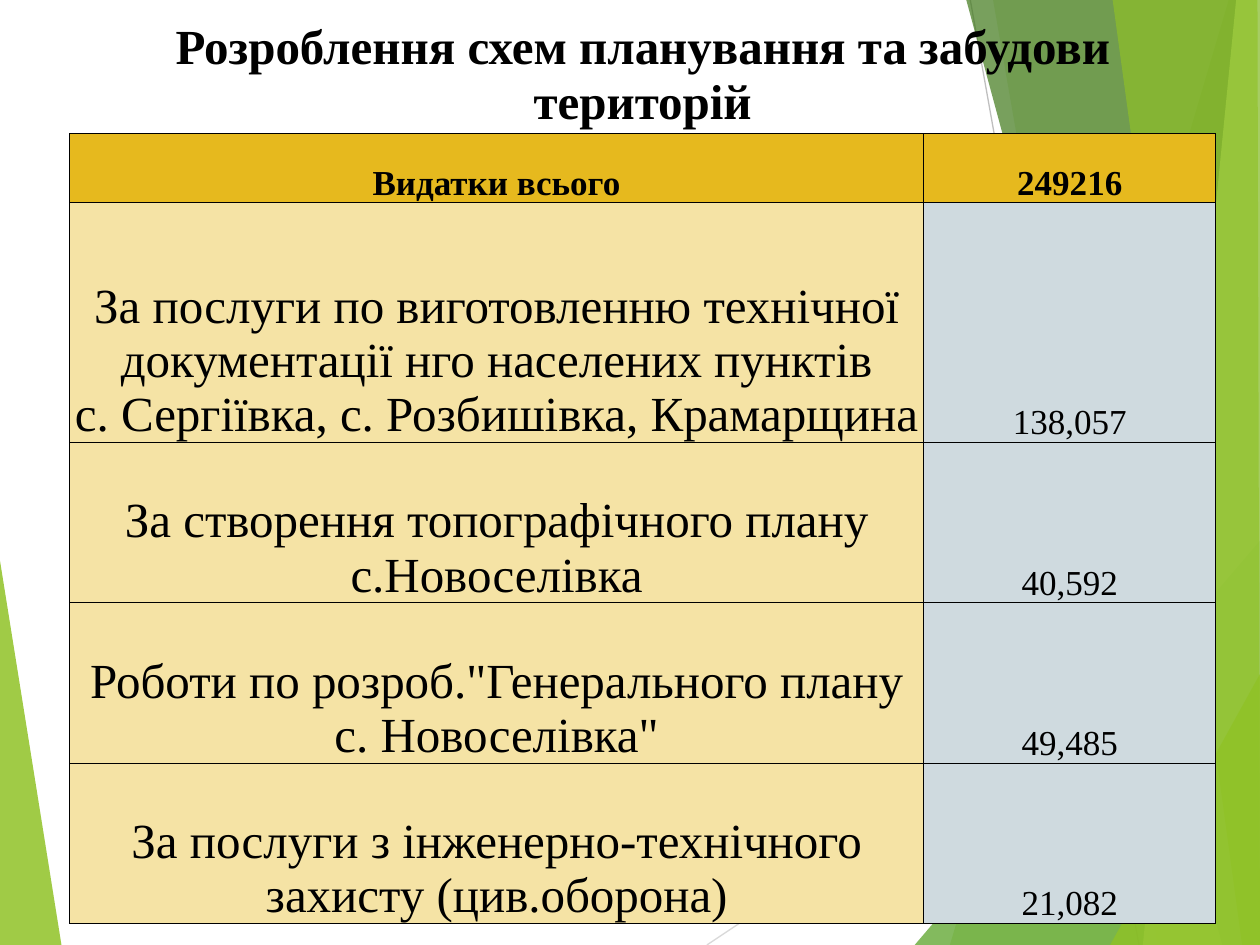
from lxml.etree import SubElement
from pptx import Presentation
from pptx.dml.color import RGBColor
from pptx.enum.shapes import MSO_CONNECTOR as Connector
from pptx.enum.text import MSO_ANCHOR as Anchor, PP_ALIGN as Align
from pptx.oxml.ns import qn
from pptx.util import Cm, Pt

COLORS = {
    "text": "000000",
    "border": "000000",
    "total": "E6B91E",
    "service": "F5E3A5",
    "amount": "CFDADF",
    "lime": "90C226",
    "green": "54A021",
    "forest": "3F7819",
    "pale": "C0E474",
    "light_ray": "D9D9D9",
    "dark_ray": "BFBFBF",
}
WIDTH, HEIGHT = 25.4, 19.05
FONT = "Times New Roman"

LEFT_WEDGE = ("lime", 85, [(0, 11.3), (1.24, HEIGHT), (0, HEIGHT)])
RAYS = [
    ("light_ray", (14.25, HEIGHT), (WIDTH, 11.61)),
    ("dark_ray", (19.56, 0), (22.96, HEIGHT)),
]
RIGHT_PANELS = [
    ("lime", 30, [(24.77, 0), (19.15, HEIGHT), (WIDTH, HEIGHT), (WIDTH, 0)]),
    ("lime", 20, [(20.02, 0), (23.34, HEIGHT), (WIDTH, HEIGHT), (WIDTH, 0)]),
    ("green", 72, [(18.44, HEIGHT), (WIDTH, 10.9), (WIDTH, HEIGHT)]),
    ("forest", 70, [(19.48, 0), (24.64, HEIGHT), (WIDTH, HEIGHT), (WIDTH, 0)]),
    ("pale", 70, [(24.92, 0), (23.04, HEIGHT), (WIDTH, HEIGHT), (WIDTH, 0)]),
    ("lime", 65, [(22.43, 0), (25.04, HEIGHT), (WIDTH, HEIGHT), (25.35, 0)]),
    ("lime", 80, [(22.38, HEIGHT), (WIDTH, 13.59), (WIDTH, HEIGHT)]),
]

HEADING = "Розроблення схем планування та забудови територій"
TOTAL = ("Видатки всього", "249216")
EXPENSES = [
    ("За послуги по виготовленню технічної документації нго населених пунктів\n"
     "с. Сергіївка, с. Розбишівка, Крамарщина", "138,057"),
    ("За створення топографічного плану с.Новоселівка", "40,592"),
    ("Роботи по розроб.\"Генерального плану\nс. Новоселівка\"", "49,485"),
    ("За послуги з інженерно-технічного захисту (цив.оборона)", "21,082"),
]
COLUMN_WIDTHS = [17.22, 5.89]
ROW_HEIGHTS = [2.36, 1.4, 4.83] + [3.23] * 3


def rgb(color):
    return RGBColor.from_string(COLORS[color])


def add_panel(slide, color, opacity, corners):
    points = [(Cm(x), Cm(y)) for x, y in corners]
    builder = slide.shapes.build_freeform(*points[0])
    builder.add_line_segments(points[1:], close=True)
    panel = builder.convert_to_shape()
    panel.shadow.inherit = False
    panel.line.fill.background()
    panel.fill.solid()
    panel.fill.fore_color.rgb = rgb(color)
    fill_color = panel.fill._xPr.find(qn("a:solidFill"))[0]
    SubElement(fill_color, qn("a:alpha"), val=str(opacity * 1000))


def add_ray(slide, color, start, end):
    ray = slide.shapes.add_connector(
        Connector.STRAIGHT, *(Cm(value) for value in start + end))
    ray.line.color.rgb = rgb(color)
    ray.line.width = Pt(0.75)
    SubElement(ray._element.spPr, qn("a:effectLst"))


def write_text(frame, text, size=28, bold=False, color="text"):
    frame.text = text
    for paragraph in frame.paragraphs:
        paragraph.alignment = Align.CENTER
        for run in paragraph.runs:
            run.font.name = FONT
            run.font.size = Pt(size)
            run.font.bold = bold
            run.font.color.rgb = rgb(color)


def set_borders(cell, visible):
    properties = cell._tc.get_or_add_tcPr()
    for position, side in enumerate("LRTB"):
        border = properties.makeelement(qn(f"a:ln{side}"), {"w": str(Pt(0.5))})
        properties.insert(position, border)
        if side in visible:
            paint = SubElement(border, qn("a:solidFill"))
            SubElement(paint, qn("a:srgbClr"), val=COLORS["border"])
        else:
            SubElement(border, qn("a:noFill"))


def fill_cell(cell, text, fill=None, anchor=Anchor.BOTTOM, borders="LRTB", **style):
    cell.margin_left = cell.margin_right = cell.margin_top = Cm(0.02)
    cell.margin_bottom = 0
    cell.vertical_anchor = anchor
    if fill:
        cell.fill.solid()
        cell.fill.fore_color.rgb = rgb(fill)
    else:
        cell.fill.background()
    set_borders(cell, borders)
    write_text(cell.text_frame, text, **style)


def add_expense_table(slide):
    table = slide.shapes.add_table(
        len(ROW_HEIGHTS), len(COLUMN_WIDTHS), Cm(1.4), Cm(0.33),
        Cm(sum(COLUMN_WIDTHS)), Cm(sum(ROW_HEIGHTS))).table
    table.horz_banding = False
    for column, width in zip(table.columns, COLUMN_WIDTHS):
        column.width = Cm(width)
    for row, height in zip(table.rows, ROW_HEIGHTS):
        row.height = Cm(height)

    table.cell(0, 0).merge(table.cell(0, 1))
    for column, heading in enumerate((HEADING, "")):
        fill_cell(table.cell(0, column), heading, anchor=Anchor.MIDDLE,
                  borders="B", bold=True)
    for column, text in enumerate(TOTAL):
        fill_cell(table.cell(1, column), text, "total", size=20, bold=True)
    for row, (service, amount) in enumerate(EXPENSES, start=2):
        fill_cell(table.cell(row, 0), service, "service")
        fill_cell(table.cell(row, 1), amount, "amount", size=20)


def main():
    deck = Presentation()
    deck.slide_width, deck.slide_height = Cm(WIDTH), Cm(HEIGHT)
    slide = deck.slides.add_slide(deck.slide_layouts[6])
    add_panel(slide, *LEFT_WEDGE)
    for ray in RAYS:
        add_ray(slide, *ray)
    for panel in RIGHT_PANELS:
        add_panel(slide, *panel)
    add_expense_table(slide)
    deck.save("out.pptx")


if __name__ == "__main__":
    main()
